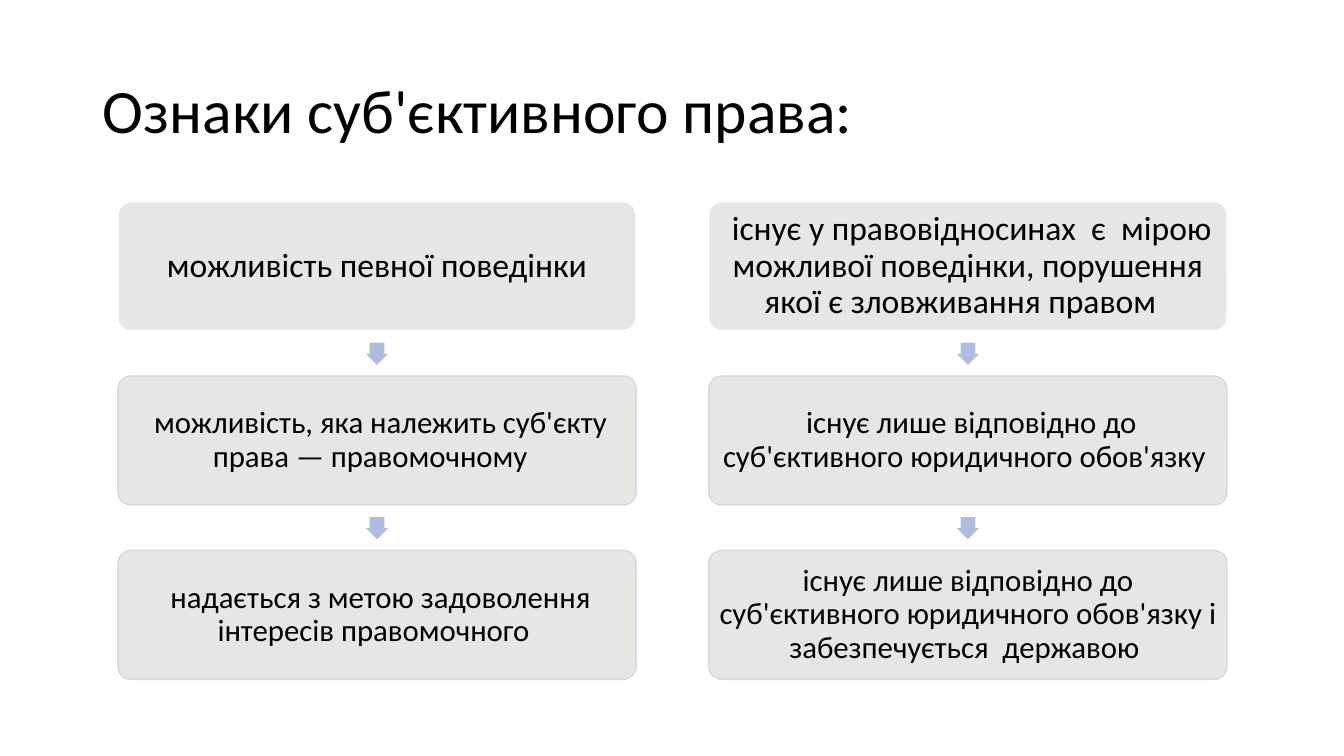
"""Build the slide on the features of a subjective right."""
from dataclasses import dataclass

from lxml import etree
from pptx import Presentation
from pptx.dml.color import RGBColor
from pptx.enum.shapes import MSO_SHAPE
from pptx.enum.text import MSO_ANCHOR, MSO_AUTO_SIZE, PP_ALIGN
from pptx.oxml.ns import qn
from pptx.shapes.autoshape import Shape
from pptx.slide import Slide
from pptx.text.text import TextFrame
from pptx.util import Emu, Pt

ROUNDED = MSO_SHAPE.ROUNDED_RECTANGLE
DOWN_ARROW = MSO_SHAPE.DOWN_ARROW
MIDDLE = MSO_ANCHOR.MIDDLE
NO_AUTOFIT = MSO_AUTO_SIZE.NONE
LEFT, CENTER = PP_ALIGN.LEFT, PP_ALIGN.CENTER
TITLE_ONLY = 5
PX = 9144


@dataclass(frozen=True)
class Theme:
    font: str = "Calibri"
    text: str = "000000"
    card: str = "E7E6E6"
    head_line: str = "FFFFFF"
    step_line: str = "CFD5EA"
    arrow: str = "B0BCDE"
    line_opacity: int = 90
    title_size: int = 44
    head_size: int = 24
    step_size: int = 22


@dataclass(frozen=True)
class Column:
    left: int
    features: tuple[str, ...]


THEME = Theme()
CARD_W, CARD_H = 514, 128
TOP, PITCH = 200, 173
ARROW, ARROW_DROP = 22, 140
INSET = 3
TITLE = "Ознаки суб'єктивного права: "
COLUMNS = (
    Column(117, (
        " можливість певної поведінки ",
        " можливість, яка належить суб'єкту права — правомочному  ",
        " надається з метою задоволення інтересів правомочного ",
    )),
    Column(703, (
        " існує у правовідносинах  є  мірою можливої поведінки, порушення якої є зловживання правом  ",
        " існує лише відповідно до суб'єктивного юридичного обов'язку ",
        "існує лише відповідно до суб'єктивного юридичного обов'язку і забезпечується  державою ",
    )),
)


def px(n: int) -> Emu:
    """Turn px into EMU."""
    return Emu(n * PX)


def color(code: str) -> RGBColor:
    """Read a hex colour."""
    return RGBColor.from_string(code)


def write(tf: TextFrame, text: str, size: int, align: PP_ALIGN) -> None:
    """Write one formatted paragraph, centred vertically."""
    tf.word_wrap = True
    tf.auto_size = NO_AUTOFIT
    tf.vertical_anchor = MIDDLE
    p = tf.paragraphs[0]
    p.alignment = align
    p.line_spacing = 0.9
    r = p.add_run()
    r.text = text
    r.font.name = THEME.font
    r.font.size = Pt(size)
    r.font.color.rgb = color(THEME.text)


def add_filled(slide: Slide, kind: MSO_SHAPE, left: int, top: int,
               width: int, height: int, fill: str) -> Shape:
    """Add a flat filled shape without a shadow."""
    sp = slide.shapes.add_shape(kind, px(left), px(top), px(width), px(height))
    sp.shadow.inherit = False
    sp.fill.solid()
    sp.fill.fore_color.rgb = color(fill)
    return sp


def add_card(slide: Slide, left: int, top: int, text: str, is_head: bool) -> None:
    """Add a rounded card holding one feature."""
    sp = add_filled(slide, ROUNDED, left, top, CARD_W, CARD_H, THEME.card)
    sp.adjustments[0] = 0.1
    sp.line.width = Pt(1)
    sp.line.color.rgb = color(THEME.head_line if is_head else THEME.step_line)
    if not is_head:
        clr = sp.line.fill._xPr.find(f".//{qn('a:srgbClr')}")
        etree.SubElement(clr, qn("a:alpha"), val=str(THEME.line_opacity * 1000))
    tf = sp.text_frame
    tf.margin_left = tf.margin_right = tf.margin_top = tf.margin_bottom = px(INSET)
    write(tf, text, THEME.head_size if is_head else THEME.step_size, CENTER)


def add_arrow(slide: Slide, left: int, top: int) -> None:
    """Add a small arrow pointing to the next card."""
    sp = add_filled(slide, DOWN_ARROW, left, top, ARROW, ARROW, THEME.arrow)
    sp.adjustments[0] = 0.67
    sp.adjustments[1] = 0.5
    sp.line.fill.background()


def add_column(slide: Slide, column: Column) -> None:
    """Add a column of cards linked by arrows."""
    for row, feature in enumerate(column.features):
        top = TOP + row * PITCH
        add_card(slide, column.left, top, feature, row == 0)
        if row < len(column.features) - 1:
            add_arrow(slide, column.left + (CARD_W - ARROW) // 2, top + ARROW_DROP)


def main() -> None:
    """Build and save the presentation."""
    prs = Presentation()
    prs.slide_width, prs.slide_height = px(1333), px(750)
    slide = prs.slides.add_slide(prs.slide_layouts[TITLE_ONLY])
    title = slide.shapes.title
    title.left, title.top, title.width, title.height = map(px, (92, 40, 1150, 145))
    write(title.text_frame, TITLE, THEME.title_size, LEFT)
    for column in COLUMNS:
        add_column(slide, column)
    prs.save("out.pptx")


if __name__ == "__main__":
    main()
